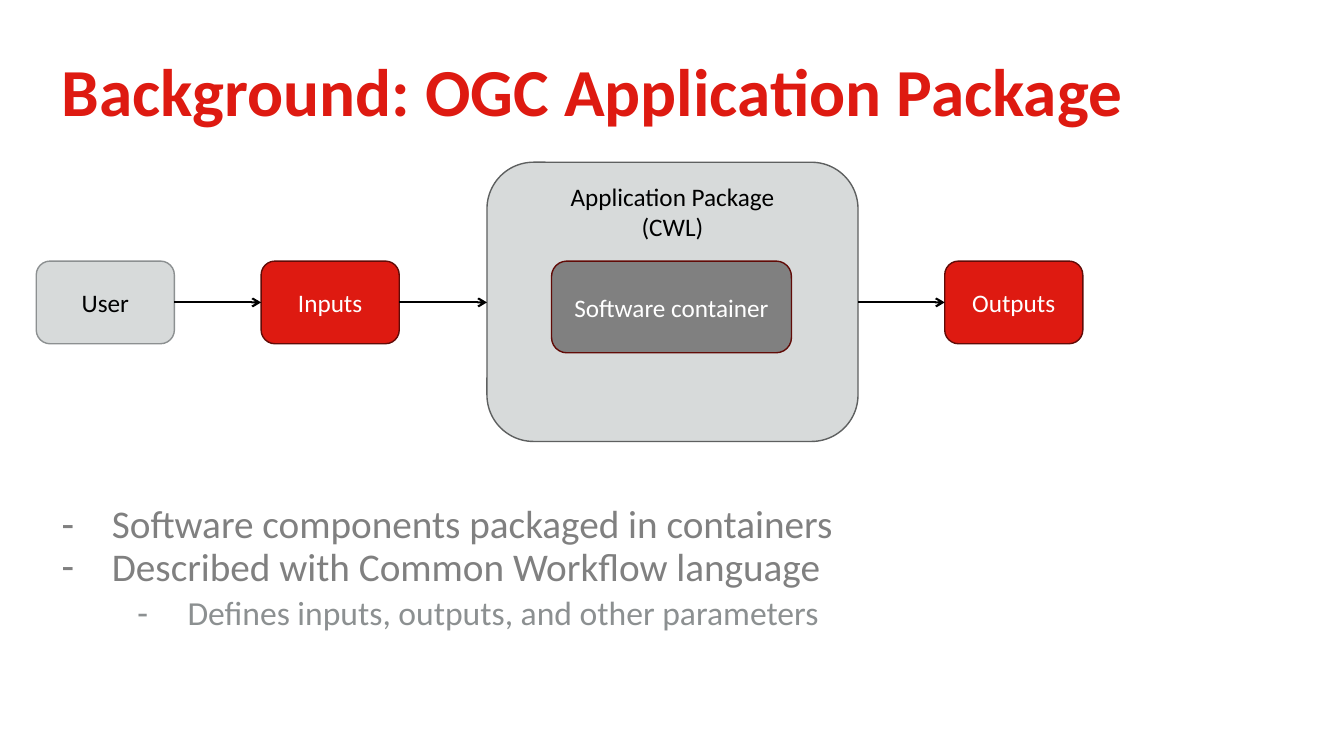
from dataclasses import dataclass

from lxml.etree import SubElement
from pptx import Presentation
from pptx.dml.color import RGBColor
from pptx.enum.shapes import MSO_CONNECTOR, MSO_SHAPE
from pptx.enum.text import MSO_ANCHOR, MSO_AUTO_SIZE, PP_ALIGN
from pptx.oxml.ns import qn
from pptx.util import Emu, Pt

PX = 9144  # 100 px to the inch
FONT = "Calibri"
COLORS = {
    "red": "DE1A11",
    "dark_red": "610B07",
    "light": "D7DADA",
    "gray": "808080",
    "mid": "8C9091",
    "edge": "5E6060",
    "black": "000000",
    "white": "FFFFFF",
}


@dataclass(frozen=True)
class Box:
    lines: tuple[str, ...]
    left: int
    top: int
    width: int
    height: int
    fill: str
    line: str
    color: str
    anchor: MSO_ANCHOR = MSO_ANCHOR.MIDDLE

    @property
    def right(self) -> int:
        return self.left + self.width


@dataclass(frozen=True)
class Bullet:
    text: str
    level: int
    margin: int
    size: int
    color: str
    before: int


# Workflow content
STEP = {"top": 259, "width": 137, "height": 82}
USER = Box(("User",), 36, **STEP, fill="light", line="mid", color="black")
INPUTS = Box(("Inputs",), 259, **STEP, fill="red", line="dark_red", color="white")
OUTPUTS = Box(("Outputs",), 937, **STEP, fill="red", line="dark_red", color="white")
PACKAGE = Box(("Application Package", "(CWL)"), 483, 161, 368, 277,
              "light", "edge", "black", MSO_ANCHOR.TOP)
CONTAINER = Box(("Software container",), 547, 259, 238, 91,
                "gray", "dark_red", "white")
FLOW = (USER, INPUTS, PACKAGE, OUTPUTS)
FLOW_Y = 300

BULLETS = (
    Bullet("Software components packaged in containers", 0, 50, 28, "gray", 0),
    Bullet("Described with Common Workflow language", 0, 50, 28, "gray", 0),
    Bullet("Defines inputs, outputs, and other parameters", 1, 125, 24, "mid", 5),
)


def px(value: int) -> Emu:
    return Emu(value * PX)


def rgb(name: str) -> RGBColor:
    return RGBColor.from_string(COLORS[name])


def apply(target, values: dict) -> None:
    for name, value in values.items():
        setattr(target, name, value)


def place(sp, left: int, top: int, width: int, height: int) -> None:
    apply(sp, {"left": px(left), "top": px(top),
               "width": px(width), "height": px(height)})


def add_text(p, text: str, size: int, color: str, bold: bool = False) -> None:
    r = p.add_run()
    r.text = text
    apply(r.font, {"name": FONT, "size": Pt(size), "bold": bold})
    r.font.color.rgb = rgb(color)


def fill_title(sp, text: str) -> None:
    place(sp, 51, 54, 1111, 91)
    tf = sp.text_frame
    apply(tf, {"word_wrap": True, "auto_size": MSO_AUTO_SIZE.NONE,
               "vertical_anchor": MSO_ANCHOR.TOP,
               "margin_left": px(10), "margin_top": px(10),
               "margin_right": px(10), "margin_bottom": px(10)})
    p = tf.paragraphs[0]
    apply(p, {"alignment": PP_ALIGN.LEFT, "line_spacing": 0.8,
              "space_before": Pt(0)})
    add_text(p, text, 48, "red", bold=True)


def fill_bullets(sp, bullets: tuple[Bullet, ...]) -> None:
    place(sp, 51, 455, 832, 178)
    tf = sp.text_frame
    apply(tf, {"word_wrap": True, "auto_size": MSO_AUTO_SIZE.NONE,
               "vertical_anchor": MSO_ANCHOR.BOTTOM})
    for i, bullet in enumerate(bullets):
        p = tf.add_paragraph() if i else tf.paragraphs[0]
        pPr = p._p.get_or_add_pPr()
        pPr.set("marL", str(px(bullet.margin)))
        pPr.set("indent", str(px(-50)))
        SubElement(pPr, qn("a:buChar")).set("char", "-")
        apply(p, {"level": bullet.level, "line_spacing": 0.9,
                  "space_before": Pt(bullet.before), "space_after": Pt(0)})
        add_text(p, bullet.text, bullet.size, bullet.color)


def add_box(s, box: Box) -> None:
    sp = s.shapes.add_shape(MSO_SHAPE.ROUNDED_RECTANGLE, px(box.left),
                            px(box.top), px(box.width), px(box.height))
    sp.shadow.inherit = False
    sp.fill.solid()
    sp.fill.fore_color.rgb = rgb(box.fill)
    sp.line.color.rgb = rgb(box.line)
    sp.line.width = Pt(1)
    tf = sp.text_frame
    apply(tf, {"word_wrap": True, "vertical_anchor": box.anchor,
               "margin_top": px(5), "margin_bottom": px(5)})
    for i, line in enumerate(box.lines):
        p = tf.add_paragraph() if i else tf.paragraphs[0]
        p.alignment = PP_ALIGN.CENTER
        add_text(p, line, 18, box.color)


def add_arrow(s, start: Box, end: Box) -> None:
    line = s.shapes.add_connector(MSO_CONNECTOR.STRAIGHT, px(start.right),
                                  px(FLOW_Y), px(end.left), px(FLOW_Y))
    line.line.color.rgb = rgb("black")
    line.line.width = Pt(1.5)
    SubElement(line.line._get_or_add_ln(), qn("a:tailEnd")).set("type", "arrow")
    SubElement(line._element.spPr, qn("a:effectLst"))


def main() -> None:
    prs = Presentation()
    prs.slide_width, prs.slide_height = px(1333), px(750)
    s = prs.slides.add_slide(prs.slide_layouts[1])

    # Title and list
    fill_title(s.shapes.title, "Background: OGC Application Package")
    fill_bullets(s.placeholders[1], BULLETS)

    # Workflow boxes, back to front
    for box in (PACKAGE, CONTAINER, INPUTS, OUTPUTS, USER):
        add_box(s, box)

    # Arrows between neighbouring steps
    for start, end in zip(FLOW, FLOW[1:]):
        add_arrow(s, start, end)

    prs.save("out.pptx")


if __name__ == "__main__":
    main()
